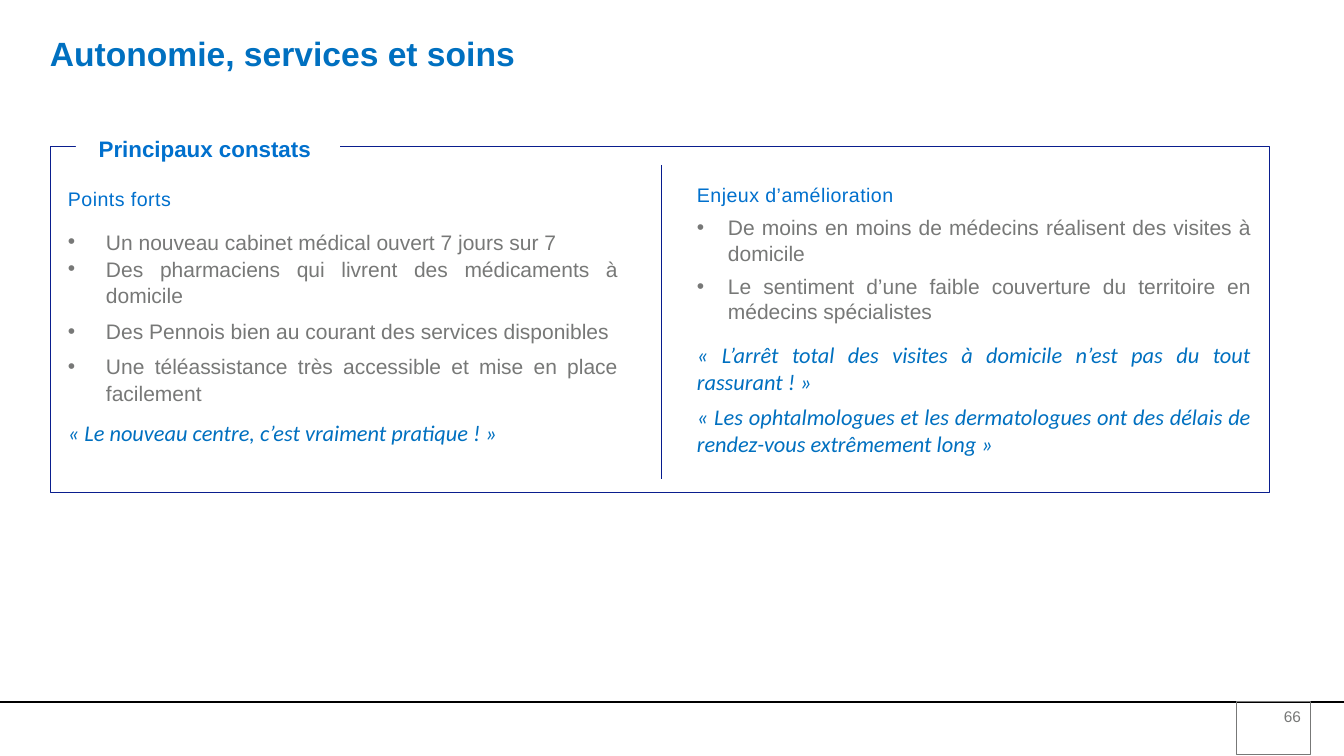
"""Build the slide on autonomy, services and care."""
from lxml import etree
from pptx import Presentation
from pptx import util as u
from pptx.dml.color import RGBColor
from pptx.enum import shapes, text
from pptx.oxml.ns import qn

BLUE = RGBColor(0x00, 0x70, 0xC0)
BRIGHT = RGBColor(0x00, 0x70, 0xCD)
NAVY = RGBColor(0x0A, 0x1E, 0x8E)
DIVIDER = RGBColor(0x06, 0x1B, 0x8D)
GRAY = RGBColor(0x77, 0x78, 0x77)
BLACK = RGBColor(0, 0, 0)
WHITE = RGBColor(255, 255, 255)

LEFT = text.PP_ALIGN.LEFT
CENTER = text.PP_ALIGN.CENTER
RIGHT = text.PP_ALIGN.RIGHT
JUSTIFY = text.PP_ALIGN.JUSTIFY
TOP = text.MSO_ANCHOR.TOP
MIDDLE = text.MSO_ANCHOR.MIDDLE


def px(count):
    """Turn slide pixels into EMU."""
    return u.Emu(round(count * 914400 / 100.8))


def assign(target, values):
    """Set each named format value on the target."""
    for name, value in values.items():
        setattr(target, name, value)


class SlideBuilder:
    """Hold the text styles and the current slide."""

    styles = {
        "title": dict(name="Arial", size=u.Pt(24), bold=True, color=BLUE),
        "label": dict(name="Arial", size=u.Pt(16), bold=True, color=BRIGHT),
        "heading": dict(name="Arial", size=u.Pt(14), color=BRIGHT, spacing=30),
        "finding": dict(name="Arial", size=u.Pt(15), color=GRAY),
        "quote": dict(name="Calibri", size=u.Pt(16), italic=True, color=BLUE),
        "number": dict(name="Arial", size=u.Pt(11), color=GRAY),
    }

    def __init__(self, deck):
        """Add a blank page to the deck."""
        self.page = deck.slides.add_slide(deck.slide_layouts[6])

    def line(self, start, end, color):
        """Draw a thin straight line."""
        line = self.page.shapes.add_connector(
            shapes.MSO_CONNECTOR.STRAIGHT, *map(px, start + end))
        line.line.color.rgb = color
        line.line.width = u.Pt(0.75)
        etree.SubElement(line._element.spPr, qn("a:effectLst"))

    def rectangle(self, area, fill=None, outline=None, width=0.75):
        """Draw a rectangle with an optional fill and outline."""
        box = self.page.shapes.add_shape(
            shapes.MSO_SHAPE.RECTANGLE, *map(px, area))
        box.shadow.inherit = False
        if fill is None:
            box.fill.background()
        else:
            box.fill.solid()
            box.fill.fore_color.rgb = fill
        if outline is None:
            box.line.fill.background()
        else:
            box.line.color.rgb = outline
            box.line.width = u.Pt(width)
        return box

    def textbox(self, area, paragraphs, **frame):
        """Add a text box without a left inset."""
        box = self.page.shapes.add_textbox(*map(px, area))
        self.fill_text(box, paragraphs, margin_left=0, **frame)

    def fill_text(self, box, paragraphs, **frame):
        """Fill a box with (style, words, layout) paragraphs."""
        assign(box.text_frame, dict(word_wrap=True, vertical_anchor=TOP) | frame)
        for index, (style, words, layout) in enumerate(paragraphs):
            para = (box.text_frame.add_paragraph() if index
                    else box.text_frame.paragraphs[0])
            layout = dict(layout)
            if "indent" in layout:
                self.bullet(para, layout.pop("indent"))
            assign(para, dict(alignment=LEFT) | layout)
            self.span(para, words, **self.styles[style])

    def bullet(self, para, indent):
        """Give a paragraph a gray bullet and a hanging indent."""
        props = para._p.get_or_add_pPr()
        props.set("marL", str(px(indent)))
        props.set("indent", str(-px(indent)))
        color = etree.SubElement(props, qn("a:buClr"))
        etree.SubElement(color, qn("a:srgbClr"), val=str(GRAY))
        etree.SubElement(props, qn("a:buFont"), typeface="Arial")
        etree.SubElement(props, qn("a:buChar"), char="•")

    def span(self, para, words, color, spacing=0, **font):
        """Add styled words to a paragraph."""
        span = para.add_run()
        span.text = words
        assign(span.font, font)
        span.font.color.rgb = color
        if spacing:
            span._r.get_or_add_rPr().set("spc", str(spacing))


def main():
    """Build and save the slide."""
    deck = Presentation()
    assign(deck, dict(slide_width=px(1344), slide_height=px(756)))
    slide = SlideBuilder(deck)

    slide.line((0, 702), (1344, 702), BLACK)
    slide.textbox((50, 37, 1277, 39),
                  [("title", "Autonomie, services et soins", dict(line_spacing=0.9))],
                  margin_top=0)
    slide.rectangle((50, 146, 1219, 346), outline=NAVY, width=0.25)
    label = slide.rectangle((76, 139, 264, 20), fill=WHITE)
    slide.fill_text(label,
                    [("label", "Principaux constats ", dict(alignment=CENTER))],
                    word_wrap=False, vertical_anchor=MIDDLE)
    slide.line((662, 165), (662, 479), DIVIDER)

    after = dict(space_after=u.Pt(6))
    loose = dict(line_spacing=1.07)
    strong = dict(alignment=JUSTIFY, indent=38) | loose
    issue = dict(alignment=JUSTIFY, indent=31)
    slide.textbox((68, 182, 560, 303), [
        ("heading", "Points forts", after),
        ("finding", "Un nouveau cabinet médical ouvert 7 jours sur 7 ",
         strong | dict(space_before=u.Pt(6))),
        ("finding", "Des pharmaciens qui livrent des médicaments à domicile",
         strong | after),
        ("finding", "Des Pennois bien au courant des services disponibles ",
         strong | after),
        ("finding", "Une téléassistance très accessible et mise en place facilement",
         strong | dict(space_after=u.Pt(8))),
        ("quote", "« Le nouveau centre, c’est vraiment pratique ! »", loose),
    ])
    slide.textbox((697, 178, 564, 306), [
        ("heading", "Enjeux d’amélioration", after),
        ("finding", "De moins en moins de médecins réalisent des visites à domicile",
         issue | after),
        ("finding", "Le sentiment d’une faible couverture du territoire en "
         "médecins spécialistes", issue | dict(space_after=u.Pt(12))),
        ("quote", "« L’arrêt total des visites à domicile n’est pas du tout "
         "rassurant ! »", dict(alignment=JUSTIFY) | after),
        ("quote", "« Les ophtalmologues et les dermatologues ont des délais de "
         "rendez-vous extrêmement long »", dict(alignment=JUSTIFY)),
    ])
    number = slide.rectangle((1237, 702, 74, 53), outline=GRAY)
    slide.fill_text(number, [("number", "66", dict(alignment=RIGHT))])

    deck.save("out.pptx")


if __name__ == "__main__":
    main()
